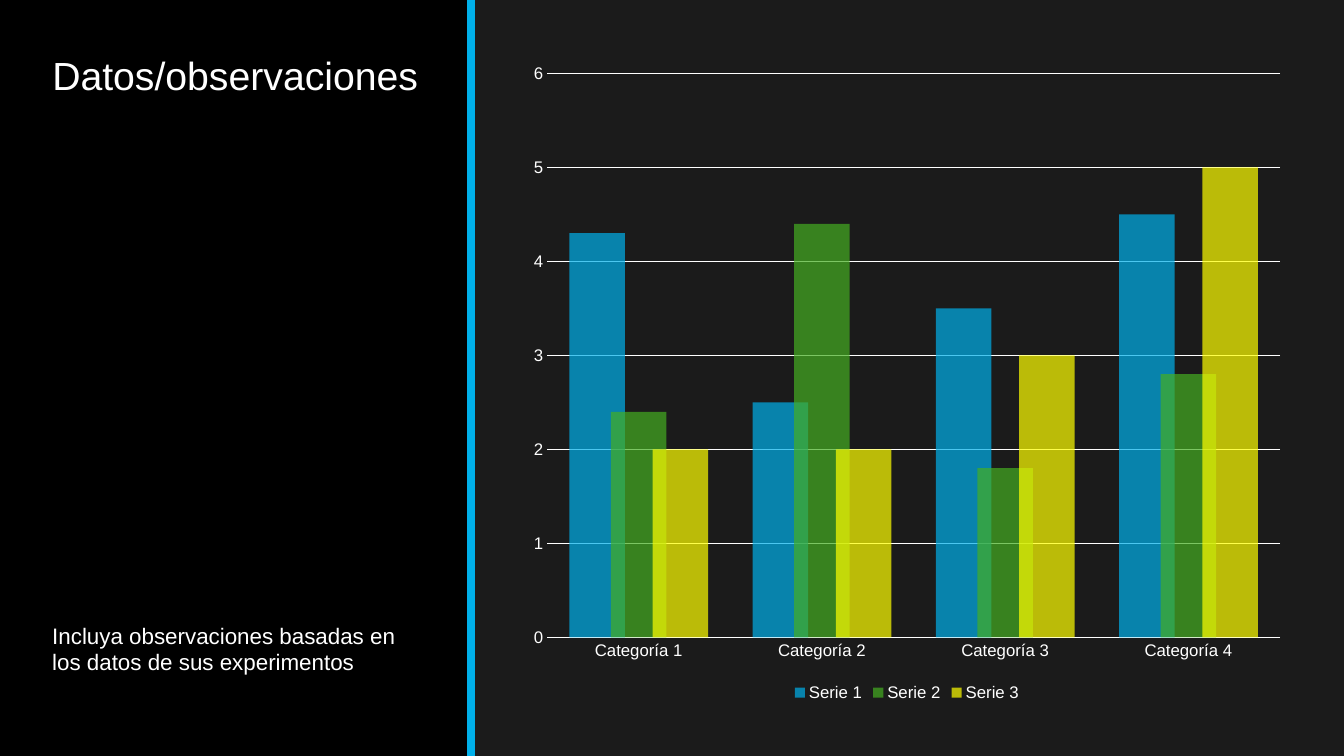
from lxml import etree
from pptx import Presentation
from pptx.chart.data import CategoryChartData
from pptx.dml.color import RGBColor
from pptx.enum.chart import XL_CHART_TYPE, XL_LEGEND_POSITION, XL_TICK_MARK
from pptx.enum.shapes import MSO_CONNECTOR, MSO_SHAPE
from pptx.enum.text import MSO_ANCHOR, PP_ALIGN
from pptx.oxml.ns import qn
from pptx.util import Inches, Pt

COLUMN_CLUSTERED = XL_CHART_TYPE.COLUMN_CLUSTERED
LEGEND_BOTTOM = XL_LEGEND_POSITION.BOTTOM
TICK_NONE = XL_TICK_MARK.NONE
STRAIGHT = MSO_CONNECTOR.STRAIGHT
RECTANGLE = MSO_SHAPE.RECTANGLE
TOP = MSO_ANCHOR.TOP
BOTTOM = MSO_ANCHOR.BOTTOM
LEFT = PP_ALIGN.LEFT

BLACK = RGBColor(0x00, 0x00, 0x00)
WHITE = RGBColor(0xFF, 0xFF, 0xFF)
CHARCOAL = RGBColor(0x1B, 0x1B, 0x1B)
BLUE = RGBColor(0x00, 0xB0, 0xEA)
GREEN = RGBColor(0x45, 0xAE, 0x22)
YELLOW = RGBColor(0xFF, 0xFF, 0x00)

FONT = "Arial"
PANEL_WIDTH = 4.67
SLIDE_HEIGHT = 7.5
OPACITY = 70
CATEGORIES = [f"Categoría {number}" for number in range(1, 5)]
SERIES = [
    ("Serie 1", (4.3, 2.5, 3.5, 4.5), BLUE),
    ("Serie 2", (2.4, 4.4, 1.8, 2.8), GREEN),
    ("Serie 3", (2, 2, 3, 5), YELLOW),
]


def set_font(font, size):
    font.name = FONT
    font.size = Pt(size)
    font.color.rgb = WHITE


def set_line(line, color, width):
    line.color.rgb = color
    line.width = Pt(width)


def add_panel(slide):
    panel = slide.shapes.add_shape(
        RECTANGLE, 0, 0, Inches(PANEL_WIDTH), Inches(SLIDE_HEIGHT))
    panel.shadow.inherit = False
    panel.fill.solid()
    panel.fill.fore_color.rgb = BLACK
    panel.line.fill.background()


def add_divider(slide):
    divider = slide.shapes.add_connector(
        STRAIGHT, Inches(PANEL_WIDTH), 0, Inches(PANEL_WIDTH), Inches(SLIDE_HEIGHT))
    set_line(divider.line, BLUE, 6)
    etree.SubElement(divider._element.spPr, qn("a:effectLst"))


def add_text(slide, text, left, top, width, height, size, anchor, spacing):
    box = slide.shapes.add_textbox(
        Inches(left), Inches(top), Inches(width), Inches(height))
    frame = box.text_frame
    frame.word_wrap = True
    frame.vertical_anchor = anchor
    frame.text = text
    paragraph = frame.paragraphs[0]
    paragraph.alignment = LEFT
    paragraph.line_spacing = spacing
    set_font(paragraph.runs[0].font, size)


def set_fill(series, color):
    series.format.fill.solid()
    series.format.fill.fore_color.rgb = color
    color_element = series._element.find(".//" + qn("a:srgbClr"))
    etree.SubElement(color_element, qn("a:alpha"), val=str(OPACITY * 1000))


def format_axis(axis):
    axis.major_tick_mark = TICK_NONE
    axis.minor_tick_mark = TICK_NONE
    set_font(axis.tick_labels.font, 12)


def add_column_chart(slide):
    data = CategoryChartData()
    data.categories = CATEGORIES
    for name, values, _ in SERIES:
        data.add_series(name, values)
    chart = slide.shapes.add_chart(
        COLUMN_CLUSTERED, Inches(5.14), Inches(0.51),
        Inches(7.71), Inches(6.49), data).chart
    set_font(chart.font, 10)
    chart.has_title = False

    plot = chart.plots[0]
    plot.gap_width = 80
    plot.overlap = 25
    plot.vary_by_categories = False
    for series, (_, _, color) in zip(plot.series, SERIES):
        set_fill(series, color)

    format_axis(chart.category_axis)
    set_line(chart.category_axis.format.line, WHITE, 1.25)
    value_axis = chart.value_axis
    format_axis(value_axis)
    value_axis.minimum_scale = 0
    value_axis.maximum_scale = 6
    value_axis.major_unit = 1
    value_axis.format.line.fill.background()
    set_line(value_axis.major_gridlines.format.line, WHITE, 0.75)

    chart.has_legend = True
    chart.legend.position = LEGEND_BOTTOM
    chart.legend.include_in_layout = False
    set_font(chart.legend.font, 12)


def main():
    presentation = Presentation()
    presentation.slide_width = Inches(13.33)
    presentation.slide_height = Inches(SLIDE_HEIGHT)
    slide = presentation.slides.add_slide(presentation.slide_layouts[6])
    slide.background.fill.solid()
    slide.background.fill.fore_color.rgb = CHARCOAL

    add_panel(slide)
    add_divider(slide)
    add_text(slide, "Datos/observaciones", 0.42, 0.51, 3.92, 1.75, 28, TOP, 0.9)
    add_column_chart(slide)
    add_text(slide, "Incluya observaciones basadas en los datos de sus experimentos",
             0.42, 4.1, 3.83, 2.65, 16, BOTTOM, 1.0)
    presentation.save("out.pptx")


if __name__ == "__main__":
    main()
